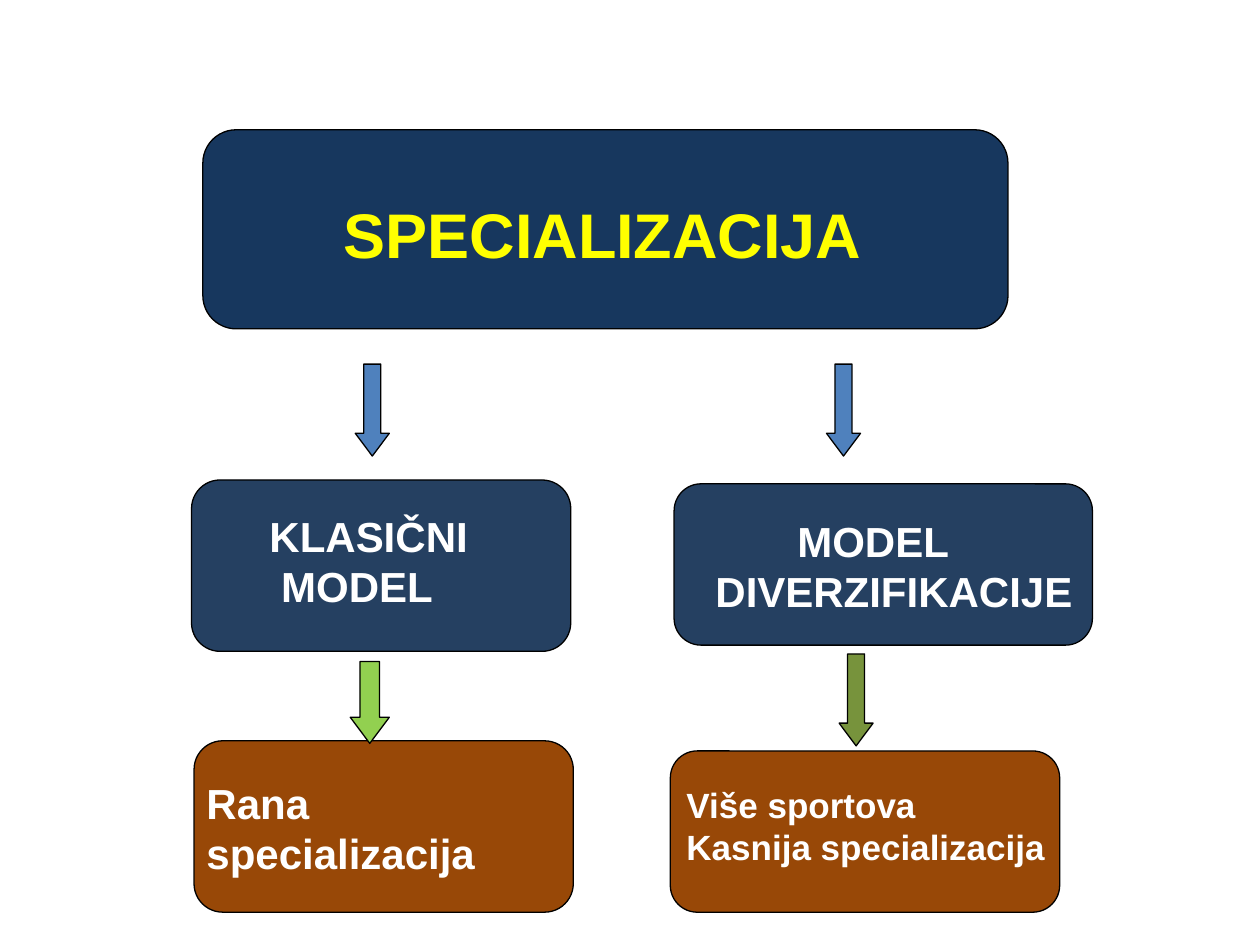
from dataclasses import dataclass
from typing import NamedTuple

from pptx import Presentation
from pptx.dml.color import RGBColor
from pptx.enum.shapes import MSO_SHAPE
from pptx.util import Inches, Pt

COLUMNS, ROWS = 100, 75


@dataclass(frozen=True)
class Theme:
    font: str = "Arial"
    title_size: int = 36
    label_size: int = 24
    detail_size: int = 20
    title_text: str = "FFFF00"
    label_text: str = "FFFFFF"
    outline: str = "000000"
    title_fill: str = "17375E"
    model_fill: str = "254061"
    outcome_fill: str = "984807"
    model_arrow: str = "4F81BD"
    early_arrow: str = "92D050"
    late_arrow: str = "77933C"


class Box(NamedTuple):
    """An area in grid columns and rows."""
    left: float
    top: float
    width: float
    height: float

    def inside(self, left, top, width, height):
        return Box(self.left + left, self.top + top, width, height)


@dataclass(frozen=True)
class Label:
    """Lines of text, each with its indent in columns, and where they sit."""
    place: tuple
    lines: tuple
    size: int


@dataclass(frozen=True)
class Branch:
    """Places are columns and rows from the corner of the branch's box."""
    model_arrow: tuple
    model: tuple
    model_label: Label
    outcome_arrow: tuple
    outcome_fill: str
    outcome: tuple
    outcome_label: Label


THEME = Theme()

CLASSIC = Branch(
    model_arrow=(13, 0, 2.7, 7.3),
    model=(0, 9.2, 30.1, 13.6),
    model_label=Label((5.2, 11.1, 17.9, 9.1),
                      (("KLASIČNI", 0), ("MODEL", 0.93)), THEME.label_size),
    outcome_arrow=(12.6, 23.6, 3.1, 6.5),
    outcome_fill=THEME.early_arrow,
    outcome=(0.2, 29.9, 30.1, 13.6),
    outcome_label=Label((0.2, 32.3, 23.5, 9.1),
                        (("Rana", 0), ("specializacija", 0)), THEME.label_size),
)

DIVERSIFIED = Branch(
    model_arrow=(12.4, 0, 2.7, 7.3),
    model=(0.3, 9.5, 33.2, 12.8),
    model_label=Label((2.6, 11.5, 30.6, 9.1),
                      (("MODEL", 6.5), ("DIVERZIFIKACIJE", 0)), THEME.label_size),
    outcome_arrow=(13.4, 23, 2.7, 7.3),
    outcome_fill=THEME.late_arrow,
    outcome=(0, 30.7, 30.9, 12.8),
    outcome_label=Label((0.3, 32.8, 30.7, 7.7),
                        (("Više sportova", 0), ("Kasnija specializacija", 0)),
                        THEME.detail_size),
)


def grid_lengths(deck, box):
    column, row = deck.slide_width / COLUMNS, deck.slide_height / ROWS
    return [round(length * unit) for length, unit in zip(box, (column, row) * 2)]


def add_filled_shape(deck, page, kind, box, fill, adjustments):
    shape = page.shapes.add_shape(kind, *grid_lengths(deck, box))
    for index, value in enumerate(adjustments):
        shape.adjustments[index] = value
    shape.shadow.inherit = False
    shape.fill.solid()
    shape.fill.fore_color.rgb = RGBColor.from_string(fill)
    shape.line.color.rgb = RGBColor.from_string(THEME.outline)
    shape.line.width = Pt(0.75)


def add_panel(deck, page, box, fill):
    add_filled_shape(deck, page, MSO_SHAPE.ROUNDED_RECTANGLE, box, fill, [0.167])


def add_arrow(deck, page, box, fill):
    add_filled_shape(deck, page, MSO_SHAPE.DOWN_ARROW, box, fill, [0.5, 0.669])


def add_label(deck, page, box, label, color):
    frame = page.shapes.add_textbox(*grid_lengths(deck, box)).text_frame
    frame.word_wrap = False
    for number, (words, indent) in enumerate(label.lines):
        para = frame.add_paragraph() if number else frame.paragraphs[0]
        if indent:
            margin = round(indent * deck.slide_width / COLUMNS)
            para._p.get_or_add_pPr().set("marL", str(margin))
        span = para.add_run()
        span.text = words
        span.font.name = THEME.font
        span.font.size = Pt(label.size)
        span.font.bold = True
        span.font.color.rgb = RGBColor.from_string(color)


def add_title(deck, page, box):
    add_panel(deck, page, box, THEME.title_fill)
    label = Label((10.2, 4.7, 43.5, 7.1), (("SPECIALIZACIJA", 0),), THEME.title_size)
    add_label(deck, page, box.inside(*label.place), label, THEME.title_text)


def add_branch(deck, page, box, branch):
    """Stack arrow, model, arrow and outcome from the top of the box."""
    add_arrow(deck, page, box.inside(*branch.model_arrow), THEME.model_arrow)
    add_panel(deck, page, box.inside(*branch.model), THEME.model_fill)
    add_panel(deck, page, box.inside(*branch.outcome), THEME.outcome_fill)
    add_arrow(deck, page, box.inside(*branch.outcome_arrow), branch.outcome_fill)
    for label in (branch.model_label, branch.outcome_label):
        add_label(deck, page, box.inside(*label.place), label, THEME.label_text)


def main():
    deck = Presentation()
    deck.slide_width, deck.slide_height = Inches(10), Inches(7.5)
    page = deck.slides.add_slide(deck.slide_layouts[6])
    add_title(deck, page, Box(16.1, 10.3, 63.9, 15.8))
    add_branch(deck, page, Box(15.2, 28.9, 30.3, 43.5), CLASSIC)
    add_branch(deck, page, Box(53.2, 28.9, 33.5, 43.5), DIVERSIFIED)
    deck.save("out.pptx")


if __name__ == "__main__":
    main()
